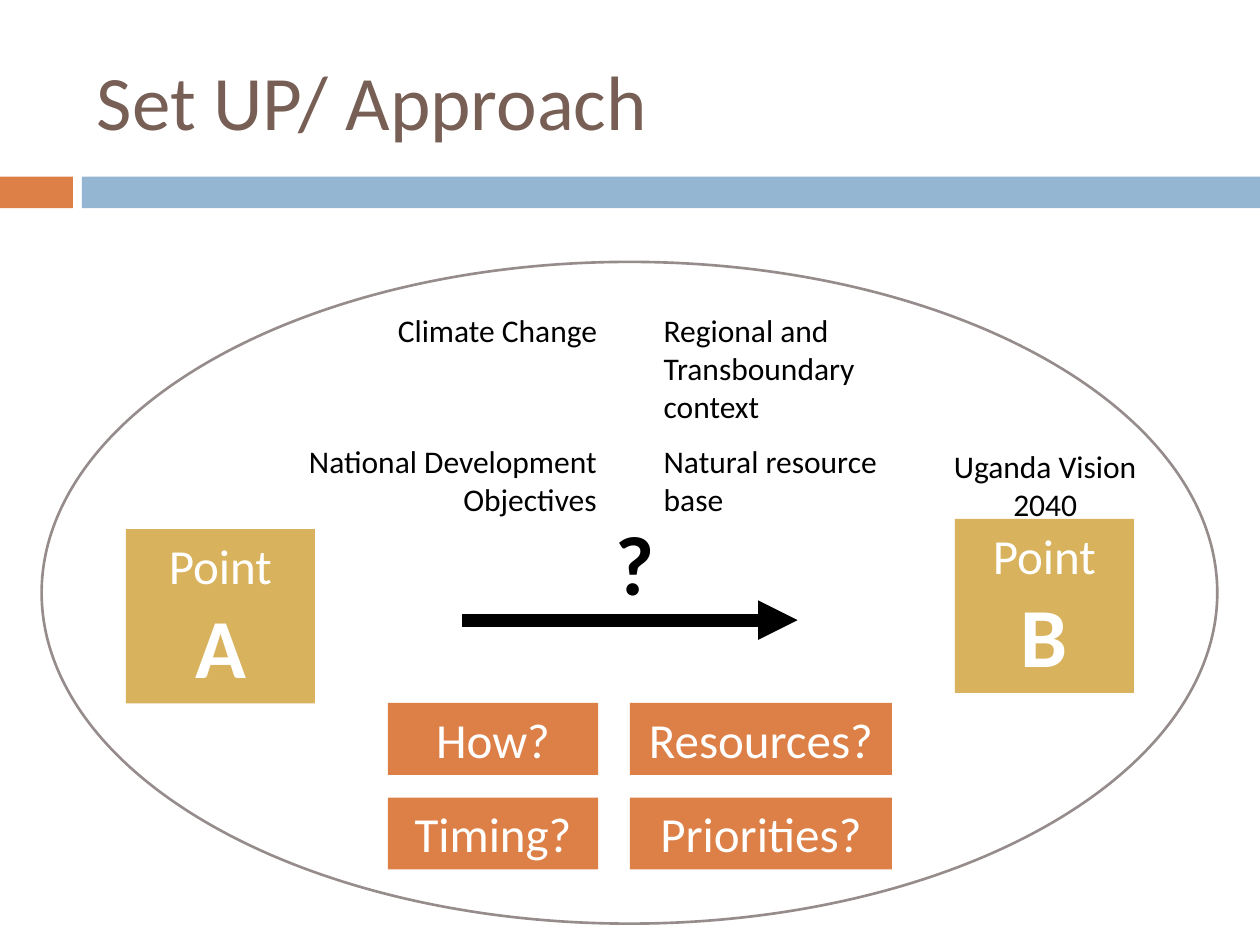
import dataclasses
import itertools

import lxml.etree
import pptx
import pptx.dml.color
import pptx.enum.shapes
import pptx.enum.text
import pptx.oxml.ns
import pptx.util

Cm, Pt = pptx.util.Cm, pptx.util.Pt
Kind = pptx.enum.shapes.MSO_SHAPE
Align = pptx.enum.text.PP_ALIGN
Anchor = pptx.enum.text.MSO_ANCHOR
Fit = pptx.enum.text.MSO_AUTO_SIZE

COLORS = {
    "orange": "DD8047", "blue": "94B6D2", "gold": "D8B25C", "gray": "968C8C",
    "brown": "775F55", "white": "FFFFFF", "black": "000000",
}
FRAME = {"word_wrap": True, "vertical_anchor": Anchor.TOP,
         "auto_size": Fit.SHAPE_TO_FIT_TEXT}


@dataclasses.dataclass
class Box:
    """Place in centimetres."""
    left: float
    top: float
    width: float
    height: float

    def emu(self) -> list:
        return [Cm(n) for n in dataclasses.astuple(self)]


@dataclasses.dataclass
class Line:
    """One paragraph of text."""
    text: str
    size: float = 18
    color: str = "black"
    bold: bool = False
    align: Align = Align.CENTER


def rgb(name: str):
    return pptx.dml.color.RGBColor.from_string(COLORS[name])


def write(frame, lines: list, form: dict = FRAME) -> None:
    for key, value in form.items():
        setattr(frame, key, value)
    for num, line in enumerate(lines):
        para = frame.paragraphs[0] if num == 0 else frame.add_paragraph()
        para.alignment = line.align
        run = para.add_run()
        run.text = line.text
        style = {"name": "Calibri", "size": Pt(line.size), "bold": line.bold}
        for key, value in style.items():
            setattr(run.font, key, value)
        run.font.color.rgb = rgb(line.color)


def block(slide, box: Box, fill: str, lines: list = (),
          kind: Kind = Kind.RECTANGLE, edge: str = ""):
    shape = slide.shapes.add_shape(kind, *box.emu())
    shape.shadow.inherit = False
    shape.fill.solid()
    shape.fill.fore_color.rgb = rgb(fill)
    if edge:
        shape.line.color.rgb = rgb(edge)
        shape.line.width = Pt(1.5)
    else:
        shape.line.fill.background()
    if lines:
        write(shape.text_frame, lines)


def label(slide, box: Box, line: Line) -> None:
    write(slide.shapes.add_textbox(*box.emu()).text_frame, [line])


def arrow(slide, start: float, end: float, top: float) -> None:
    line = slide.shapes.add_connector(
        pptx.enum.shapes.MSO_CONNECTOR.STRAIGHT,
        Cm(start), Cm(top), Cm(end), Cm(top))
    line.line.color.rgb = rgb("black")
    line.line.width = Pt(7.5)
    qn = pptx.oxml.ns.qn
    lxml.etree.SubElement(line.line._get_or_add_ln(), qn("a:tailEnd"),
                          type="triangle")
    lxml.etree.SubElement(line._element.spPr, qn("a:effectLst"))


def main() -> None:
    deck = pptx.Presentation()
    deck.slide_width, deck.slide_height = Cm(25.4), Cm(19.05)
    slide = deck.slides.add_slide(deck.slide_layouts[5])

    # Title and the band below it
    title = slide.shapes.title
    place = zip(("left", "top", "width", "height"),
                Box(1.7, 0.64, 22.66, 2.74).emu())
    for key, value in place:
        setattr(title, key, value)
    write(title.text_frame,
          [Line("Set UP/ Approach", 44, "brown", align=Align.LEFT)],
          {"word_wrap": True, "vertical_anchor": Anchor.MIDDLE,
           "auto_size": Fit.NONE})
    block(slide, Box(0, 3.56, 1.47, 0.64), "orange")
    block(slide, Box(1.65, 3.56, 23.75, 0.64), "blue")

    # Surrounding context
    block(slide, Box(0.84, 5.28, 23.7, 13.34), "white",
          kind=Kind.OVAL, edge="gray")

    # Start and end points, with the way between them
    points = {"A": Box(2.54, 10.67, 3.81, 3.51),
              "B": Box(19.25, 10.46, 3.61, 3.51)}
    for name, box in points.items():
        block(slide, box, "gold", [Line("Point", 28, "white"),
                                   Line(name, 48, "white", True)])
    arrow(slide, 9.32, 16.08, 12.5)

    # Grid of questions
    rows, cols = (14.17, 16.08), ((7.82, 4.24), (12.7, 5.28))
    asks = ("How?", "Resources?", "Timing?", "Priorities?")
    for ask, (top, (left, width)) in zip(asks, itertools.product(rows, cols)):
        block(slide, Box(left, top, width, 1.45), "orange",
              [Line(ask, 28, "white")])

    # Drivers and notes
    right, left = Align.RIGHT, Align.LEFT
    notes = (
        (Box(6.78, 6.15, 5.51, 1.02), Line("Climate Change", align=right)),
        (Box(13.13, 6.15, 5.28, 2.57),
         Line("Regional and Transboundary context", align=left)),
        (Box(5.08, 8.79, 7.2, 1.8),
         Line("National Development Objectives", align=right)),
        (Box(13.13, 8.79, 5.51, 1.8),
         Line("Natural resource base", align=left)),
        (Box(11.86, 10.19, 1.9, 2.31), Line("?", 48, bold=True)),
        (Box(18.95, 8.89, 4.24, 1.8), Line("Uganda Vision 2040")),
    )
    for box, line in notes:
        label(slide, box, line)

    deck.save("out.pptx")


if __name__ == "__main__":
    main()
